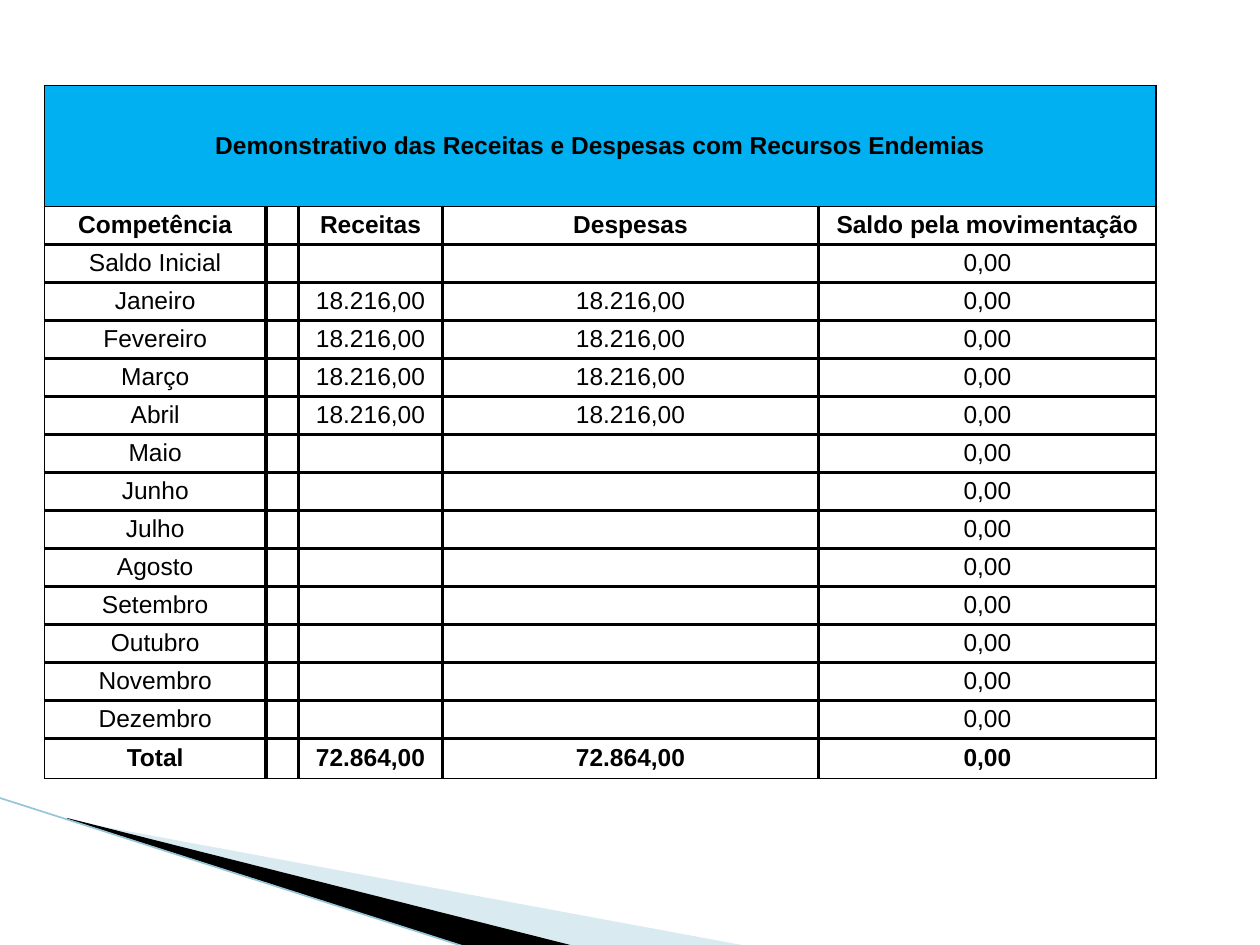
from dataclasses import dataclass

from lxml import etree
from pptx import Presentation
from pptx.dml.color import RGBColor
from pptx.enum import shapes, text
from pptx.oxml import ns
from pptx.util import Pt


@dataclass(frozen=True)
class Theme:
    """Colours, font and sizes of the slide."""
    ink: str = "000000"
    paper: str = "FFFFFF"
    band: str = "00B0F0"
    wedge: str = "A0CBDC"
    edge: str = "97C5D8"
    font: str = "Arial"
    size: float = 14
    thin: float = 1
    thick: float = 2


THEME = Theme()
TITLE = "Demonstrativo das Receitas e Despesas com Recursos Endemias"
HEADS = ["Competência", "", "Receitas", "Despesas", "Saldo pela movimentação"]
PAID = ["Janeiro", "Fevereiro", "Março", "Abril"]
OPEN = ["Maio", "Junho", "Julho", "Agosto", "Setembro", "Outubro", "Novembro", "Dezembro"]
SUM, NIL = "18.216,00", "0,00"
ROWS = [
    [TITLE, "", "", "", ""],
    HEADS,
    ["Saldo Inicial", "", "", "", NIL],
    *[[month, "", SUM, SUM, NIL] for month in PAID],
    *[[month, "", "", "", NIL] for month in OPEN],
    ["Total", "", "72.864,00", "72.864,00", NIL],
]
COLS = [126.6, 18.6, 82.3, 214.9, 192.9]
HIGHS = [69.1] + [21.72] * 14 + [22.8]


def rgb(code):
    """Turn a hex code into a colour."""
    return RGBColor.from_string(code)


def add_wedge(slide, box, points, color, alpha=100):
    """Draw a filled outline whose points are relative to the box."""
    left, top = box
    spots = [(Pt(left + x), Pt(top + y)) for x, y in points]
    pen = slide.shapes.build_freeform(*spots[0], scale=1.0)
    pen.add_line_segments(spots[1:], close=True)
    wedge = pen.convert_to_shape()
    wedge.shadow.inherit = False
    wedge.line.fill.background()
    wedge.fill.solid()
    wedge.fill.fore_color.rgb = rgb(color)
    if alpha < 100:
        tint = wedge.fill._xPr.find(".//" + ns.qn("a:srgbClr"))
        etree.SubElement(tint, ns.qn("a:alpha"), val=str(alpha * 1000))


def add_corner(slide, box):
    """Place the wedges and the slanted line in the lower left corner."""
    left, top = box
    add_wedge(slide, box, [(39.6, 13), (428.4, 85), (328.3, 85), (39.6, 12.3)], THEME.wedge, 40)
    add_wedge(slide, box, [(38.2, 11.6), (329, 85), (267.8, 85.7), (38.9, 12.3)], THEME.ink)
    line = slide.shapes.add_connector(
        shapes.MSO_CONNECTOR.STRAIGHT,
        Pt(left - 0.7), Pt(top), Pt(left + 267.1), Pt(top + 85.7))
    line.line.color.rgb = rgb(THEME.edge)
    line.line.width = Pt(0.95)
    etree.SubElement(line._element.spPr, ns.qn("a:effectLst"))


def set_edges(cell, widths):
    """Give a cell its left, right, top and bottom borders."""
    props = cell._tc.get_or_add_tcPr()
    for side, width in zip("LRTB", widths):
        edge = etree.SubElement(props, ns.qn("a:ln" + side), w=str(Pt(width)))
        fill = etree.SubElement(edge, ns.qn("a:solidFill"))
        etree.SubElement(fill, ns.qn("a:srgbClr"), val=THEME.ink)


def fill_cell(cell, words, color, bold):
    """Write and format one cell."""
    cell.fill.solid()
    cell.fill.fore_color.rgb = rgb(color)
    cell.vertical_anchor = text.MSO_ANCHOR.MIDDLE
    cell.margin_left = cell.margin_right = cell.margin_top = cell.margin_bottom = 0
    para = cell.text_frame.paragraphs[0]
    para.text = words
    para.alignment = text.PP_ALIGN.CENTER
    for run in para.runs:
        run.font.name = THEME.font
        run.font.size = Pt(THEME.size)
        run.font.bold = bold
        run.font.color.rgb = rgb(THEME.ink)
    if not words:
        etree.SubElement(para._p, ns.qn("a:endParaRPr"), sz=str(int(THEME.size * 100)))


def add_grid(slide, box):
    """Place the table of income and spending in the box."""
    last, end = len(ROWS) - 1, len(COLS) - 1
    frame = slide.shapes.add_table(len(ROWS), len(COLS), *map(Pt, box))
    grid = frame.table
    for col, width in zip(grid.columns, COLS):
        col.width = Pt(width)
    for row, high in zip(grid.rows, HIGHS):
        row.height = Pt(high)
    for i, words in enumerate(ROWS):
        for j, word in enumerate(words):
            cell = grid.cell(i, j)
            outer = (j == 0, j == end, i <= 1, i in (0, last))
            set_edges(cell, [THEME.thin if i == 0 or out else THEME.thick for out in outer])
            fill_cell(cell, word, THEME.paper if i else THEME.band, i in (0, 1, last))
    grid.cell(0, 0).merge(grid.cell(0, end))


def main():
    """Build and save the slide."""
    deck = Presentation()
    deck.slide_width, deck.slide_height = Pt(720), Pt(540)
    slide = deck.slides.add_slide(deck.slide_layouts[6])
    add_corner(slide, (0, 455.8))
    add_grid(slide, (25.4, 48.9, sum(COLS), sum(HIGHS)))
    deck.save("out.pptx")


if __name__ == "__main__":
    main()
